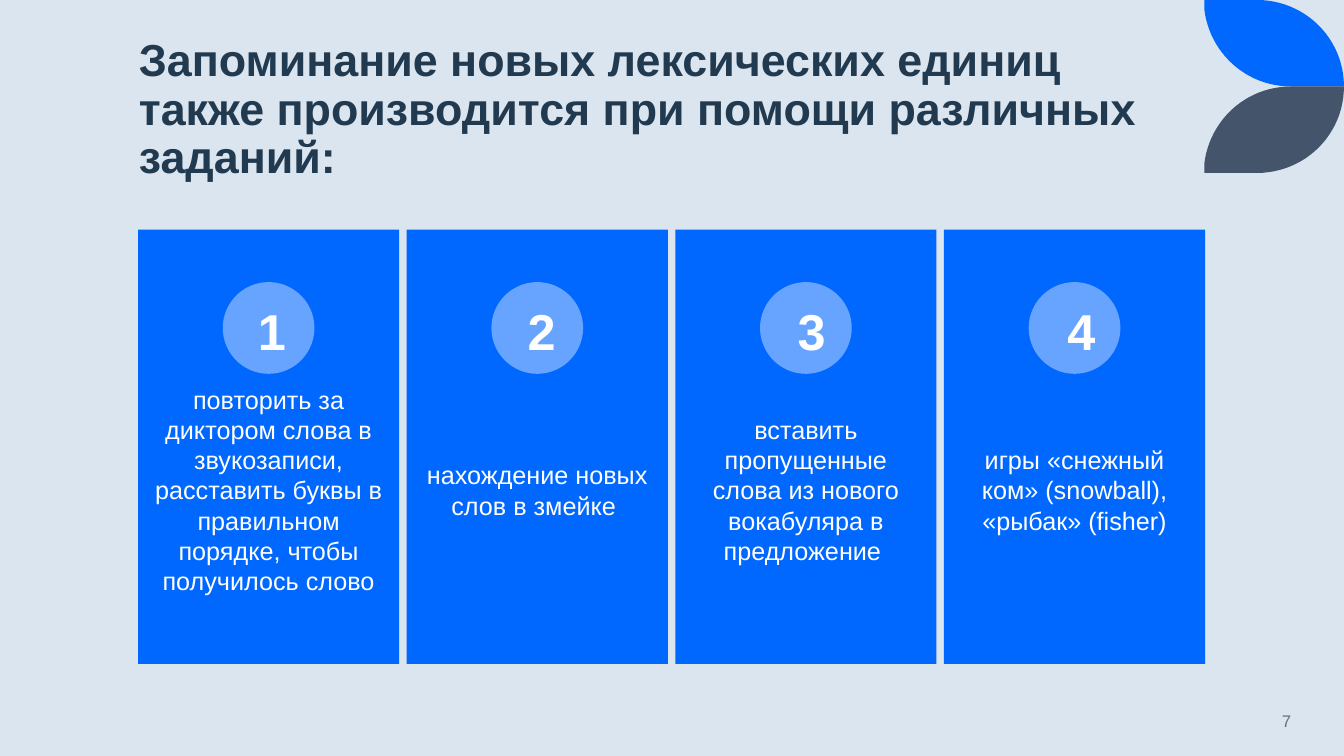
import pptx
import pptx.dml.color
import pptx.enum.shapes
import pptx.enum.text
import pptx.util
from dataclasses import dataclass

Cm = pptx.util.Cm
Shape = pptx.enum.shapes.MSO_SHAPE
Align = pptx.enum.text.PP_ALIGN
Anchor = pptx.enum.text.MSO_ANCHOR


@dataclass(frozen=True)
class Theme:
    font: str = "Arial"
    background: str = "DAE5EF"
    accent: str = "0068FF"
    slate: str = "44546A"
    badge: str = "66A4FF"
    heading: str = "223A50"
    light: str = "FFFFFF"
    muted: str = "637183"
    heading_size: int = 32
    digit_size: int = 36
    task_size: int = 18
    page_size: int = 12


theme = Theme()


def paint(shape, color):
    """Give a shape a flat fill with no outline or shadow."""
    shape.shadow.inherit = False
    shape.fill.solid()
    shape.fill.fore_color.rgb = pptx.dml.color.RGBColor.from_string(color)
    shape.line.fill.background()


def add_text(box, text, size, color, bold=False, align=Align.LEFT,
             anchor=Anchor.TOP, inset=None, line_spacing=None):
    frame = slide.shapes.add_textbox(*map(Cm, box)).text_frame
    frame.word_wrap = True
    frame.vertical_anchor = anchor
    if inset is not None:
        for side in ("left", "top", "right", "bottom"):
            setattr(frame, f"margin_{side}", Cm(inset))
    paragraph = frame.paragraphs[0]
    paragraph.alignment = align
    paragraph.line_spacing = line_spacing
    run = paragraph.add_run()
    run.text = text
    font_format = {"name": theme.font, "size": pptx.util.Pt(size), "bold": bold}
    for attribute, value in font_format.items():
        setattr(run.font, attribute, value)
    run.font.color.rgb = pptx.dml.color.RGBColor.from_string(color)


deck = pptx.Presentation()
deck.slide_width, deck.slide_height = Cm(33.87), Cm(19.05)
slide = deck.slides.add_slide(deck.slide_layouts[6])
slide.background.fill.solid()
slide.background.fill.fore_color.rgb = pptx.dml.color.RGBColor.from_string(theme.background)

# Corner leaves: the lower one mirrors the upper one across their shared edge
leaf_height = 2.18
leaf_curves = [
    [(31.67, 0), (32.89, 0), (33.87, 0.97), (33.87, leaf_height)],
    [(32.54, leaf_height), (31.39, leaf_height), (30.48, 1.32), (30.35, 0.23)],
]
curve_steps = 24
leaf_outline = [(30.35, 0)]
for curve in leaf_curves:
    for step in range(curve_steps + 1):
        t = step / curve_steps
        weights = ((1 - t) ** 3, 3 * t * (1 - t) ** 2, 3 * t ** 2 * (1 - t), t ** 3)
        leaf_outline.append(tuple(
            sum(weight * point[axis] for weight, point in zip(weights, curve))
            for axis in (0, 1)))

for color, mirrored in ((theme.accent, False), (theme.slate, True)):
    corners = [(Cm(x), Cm(2 * leaf_height - y if mirrored else y)) for x, y in leaf_outline]
    leaf = slide.shapes.build_freeform(*corners[0])
    leaf.add_line_segments(corners[1:], close=True)
    paint(leaf.convert_to_shape(), color)

add_text((3.25, 1.07, 27.15, 3.68),
         "Запоминание новых лексических единиц также производится "
         "при помощи различных заданий:",
         theme.heading_size, theme.heading, bold=True,
         anchor=Anchor.BOTTOM, line_spacing=0.9)

# Numbered task cards
tasks = [
    "повторить за диктором слова в звукозаписи, расставить буквы в "
    "правильном порядке, чтобы получилось слово",
    "нахождение новых слов в змейке ",
    "вставить пропущенные слова из нового вокабуляра в предложение ",
    "игры «снежный ком» (snowball), «рыбак» (fisher)",
]
card_left, card_width, card_pitch = 3.48, 6.58, 6.77
badge_size = 2.31
digit_left, digit_pitch = 6.25, 6.8

for index, task in enumerate(tasks):
    left = card_left + index * card_pitch
    card = slide.shapes.add_shape(
        Shape.RECTANGLE, Cm(left), Cm(5.79), Cm(card_width), Cm(10.94))
    paint(card, theme.accent)
    add_text((left, 10.16, card_width, 4.37), task, theme.task_size, theme.light,
             align=Align.CENTER, anchor=Anchor.MIDDLE, inset=0.36)
    badge = slide.shapes.add_shape(
        Shape.OVAL, Cm(left + (card_width - badge_size) / 2), Cm(7.11),
        Cm(badge_size), Cm(badge_size))
    paint(badge, theme.badge)
    add_text((digit_left + index * digit_pitch, 7.44, 0.97, 1.8), str(index + 1),
             theme.digit_size, theme.light, bold=True, align=Align.CENTER)

add_text((28.19, 17.65, 4.6, 1.02), "7", theme.page_size, theme.muted,
         align=Align.RIGHT, anchor=Anchor.MIDDLE)

deck.save("out.pptx")
